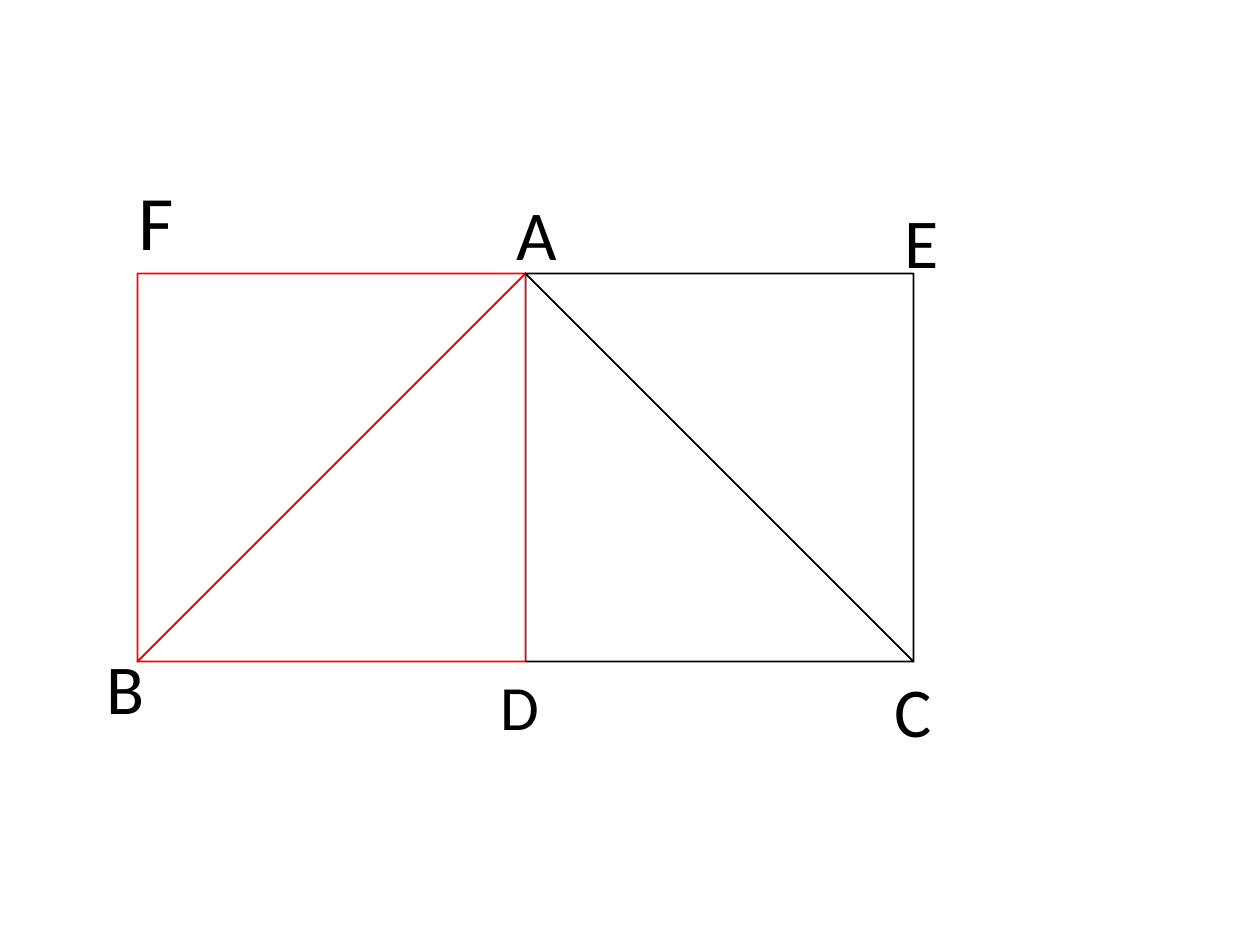
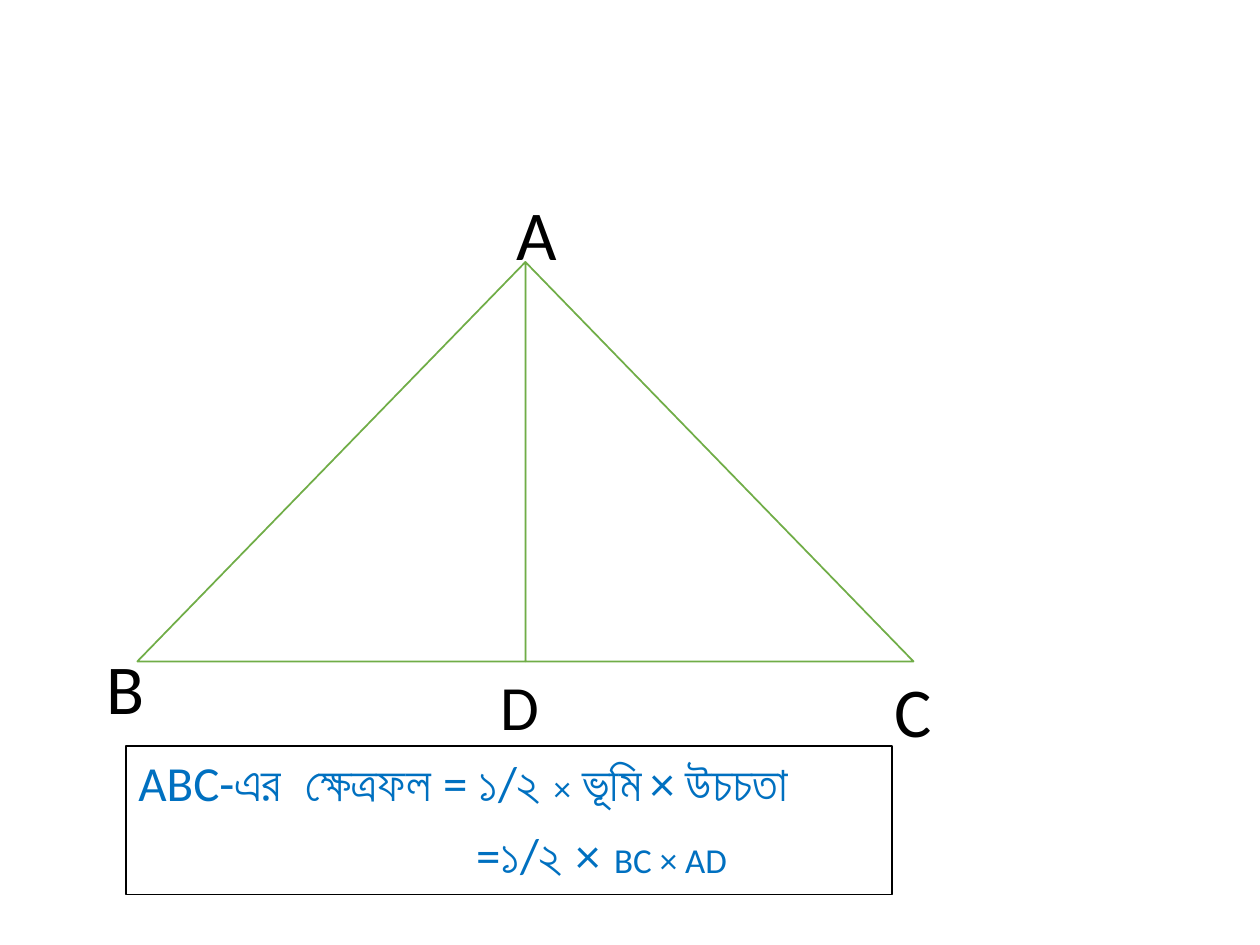
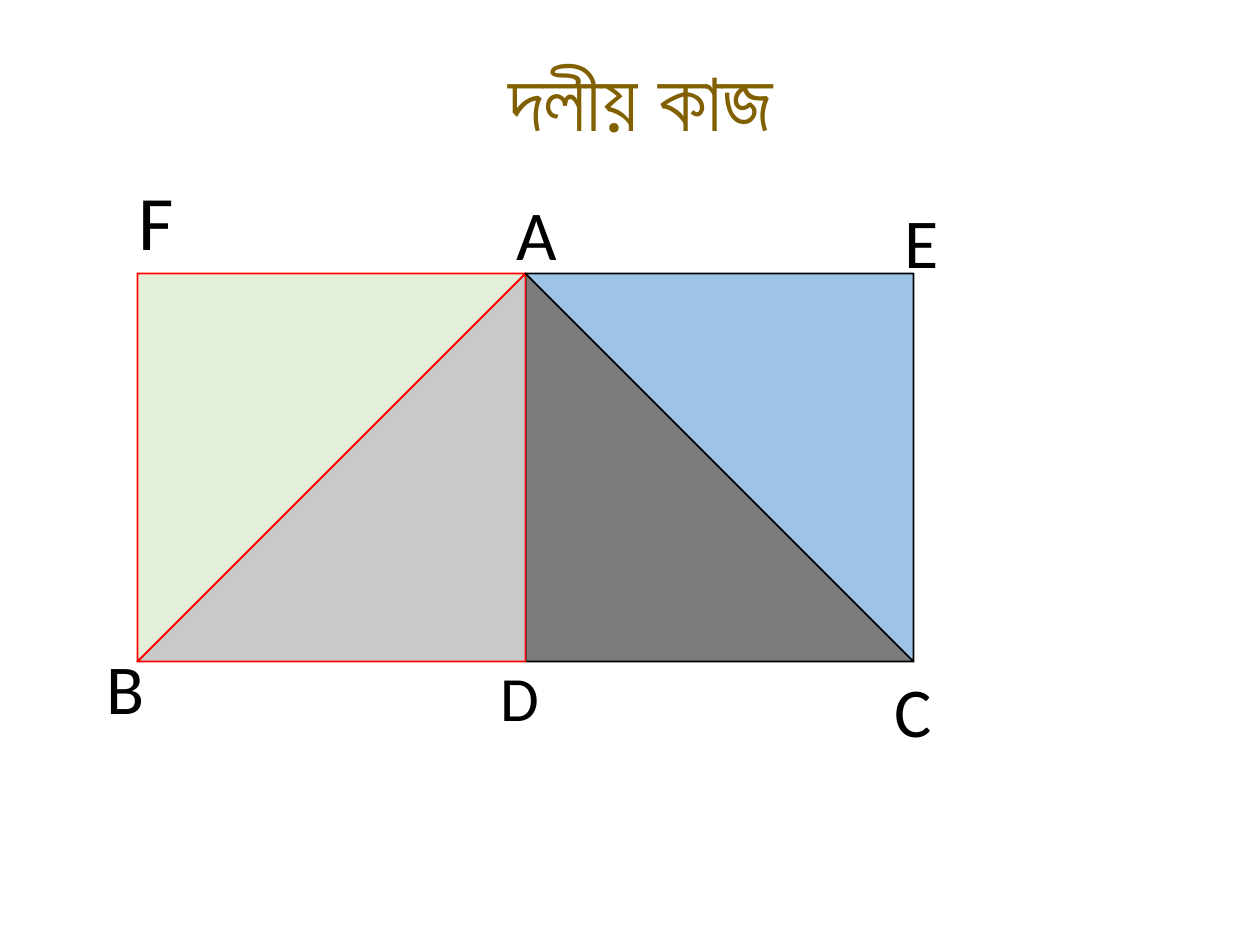
from pptx import Presentation
from pptx.dml.color import RGBColor
from pptx.enum.shapes import MSO_SHAPE
from pptx.enum.text import MSO_ANCHOR, MSO_AUTO_SIZE, PP_ALIGN
from pptx.util import Inches, Pt

RIGHT_TRIANGLE = MSO_SHAPE.RIGHT_TRIANGLE
TOP, CENTER = MSO_ANCHOR.TOP, PP_ALIGN.CENTER
GROW = MSO_AUTO_SIZE.SHAPE_TO_FIT_TEXT
TITLE_ONLY, BLANK = 5, 6

FONT = "Calibri"
BLACK, WHITE, RED, GREEN = "000000", "FFFFFF", "FF0000", "70AD47"
BLUE, BROWN = "0070C0", "806000"
GRAY, LIGHT_GRAY, PALE_GREEN, PALE_BLUE = "7C7C7C", "C9C9C9", "E2F0D9", "9DC3E6"

# The altitude AD stands at MID; both halves are SIDE wide and rest on BASE.
MID, BASE, SIDE = 4.17, 5.25, 3.08

# Vertex name: left, top, width, height, text size
VERTICES = {
    "A": (4, 1.46, 0.58, 0.77, 40),
    "B": (0.75, 5.07, 0.83, 0.77, 40),
    "C": (7, 5.25, 0.75, 0.77, 40),
    "D": (3.87, 5.25, 0.58, 0.71, 36),
    "E": (7.08, 1.53, 0.5, 0.77, 40),
    "F": (1, 1.33, 1, 0.84, 44),
}

FORMULA = [
    [("ABC-এর  ক্ষেত্রফল = ১/২ ", 28), ("×", 20), (" ভূমি", 28), (" ", 20), ("× উচচতা", 28)],
    [("=১/২ ×", 28), (" ", 36), ("BC × AD", 20)],
]
FORMULA_INDENT = 2.68


def rgb(color):
    return RGBColor.from_string(color)


def format_run(r, size, color):
    r.font.name = FONT
    r.font.size = Pt(size)
    r.font.color.rgb = rgb(color)


def paint(sp, fill, line):
    sp.fill.solid()
    sp.fill.fore_color.rgb = rgb(fill)
    sp.line.color.rgb = rgb(line)
    sp.line.width = Pt(1)


def add_triangle(s, fill, line, left_half=False, upper=False, height=SIDE):
    """Add a half of the figure; upper puts the right angle at the outer top corner."""
    left = MID - SIDE if left_half else MID
    sp = s.shapes.add_shape(RIGHT_TRIANGLE, Inches(left), Inches(BASE - height),
                            Inches(SIDE), Inches(height))
    sp.shadow.inherit = False
    paint(sp, fill, line)
    if left_half:
        sp._element.spPr.xfrm.set("flipH", "1")
    if upper:
        sp.rotation = 180


def add_rectangles(s, lower_right, lower_left, upper_left, upper_right):
    add_triangle(s, lower_right, BLACK)
    add_triangle(s, lower_left, RED, left_half=True)
    add_triangle(s, upper_left, RED, left_half=True, upper=True)
    add_triangle(s, upper_right, BLACK, upper=True)


def add_text_box(s, left, top, width, height):
    sp = s.shapes.add_textbox(Inches(left), Inches(top), Inches(width), Inches(height))
    sp.text_frame.word_wrap = True
    sp.text_frame.auto_size = GROW
    return sp


def add_vertices(s, names, d_top=5.25):
    for name in names:
        left, top, width, height, size = VERTICES[name]
        tf = add_text_box(s, left, d_top if name == "D" else top, width, height).text_frame
        tf.text = name
        format_run(tf.paragraphs[0].runs[0], size, BLACK)


def add_formula(s):
    sp = add_text_box(s, 1, 5.92, 6.08, 1.18)
    paint(sp, WHITE, BLACK)
    tf = sp.text_frame
    for i, parts in enumerate(FORMULA):
        p = tf.add_paragraph() if i else tf.paragraphs[0]
        p._p.get_or_add_pPr().set("marL", str(Inches(FORMULA_INDENT * i)))
        for text, size in parts:
            r = p.add_run()
            r.text = text
            format_run(r, size, BLUE)


def set_title(s, text):
    sp = s.shapes.title
    sp.left, sp.top, sp.width, sp.height = map(Inches, (3.42, 0.33, 3.33, 0.91))
    tf = sp.text_frame
    tf.text = text
    tf.vertical_anchor = TOP
    tf.auto_size = GROW
    p = tf.paragraphs[0]
    p.alignment = CENTER
    format_run(p.runs[0], 48, BROWN)


def add_outline_slide(prs):
    s = prs.slides.add_slide(prs.slide_layouts[BLANK])
    add_rectangles(s, WHITE, WHITE, WHITE, WHITE)
    add_vertices(s, "ABCDEF")


def add_area_slide(prs):
    s = prs.slides.add_slide(prs.slide_layouts[BLANK])
    for left_half in (False, True):
        add_triangle(s, WHITE, GREEN, left_half, height=3.17)
    add_vertices(s, "ABCD")
    add_formula(s)


def add_group_work_slide(prs):
    s = prs.slides.add_slide(prs.slide_layouts[TITLE_ONLY])
    add_rectangles(s, GRAY, LIGHT_GRAY, PALE_GREEN, PALE_BLUE)
    add_vertices(s, "ABCDEF", d_top=5.18)
    set_title(s, "দলীয় কাজ")


def main():
    prs = Presentation()
    prs.slide_width, prs.slide_height = Inches(10), Inches(7.5)
    add_outline_slide(prs)
    add_area_slide(prs)
    add_group_work_slide(prs)
    prs.save("out.pptx")


if __name__ == "__main__":
    main()
